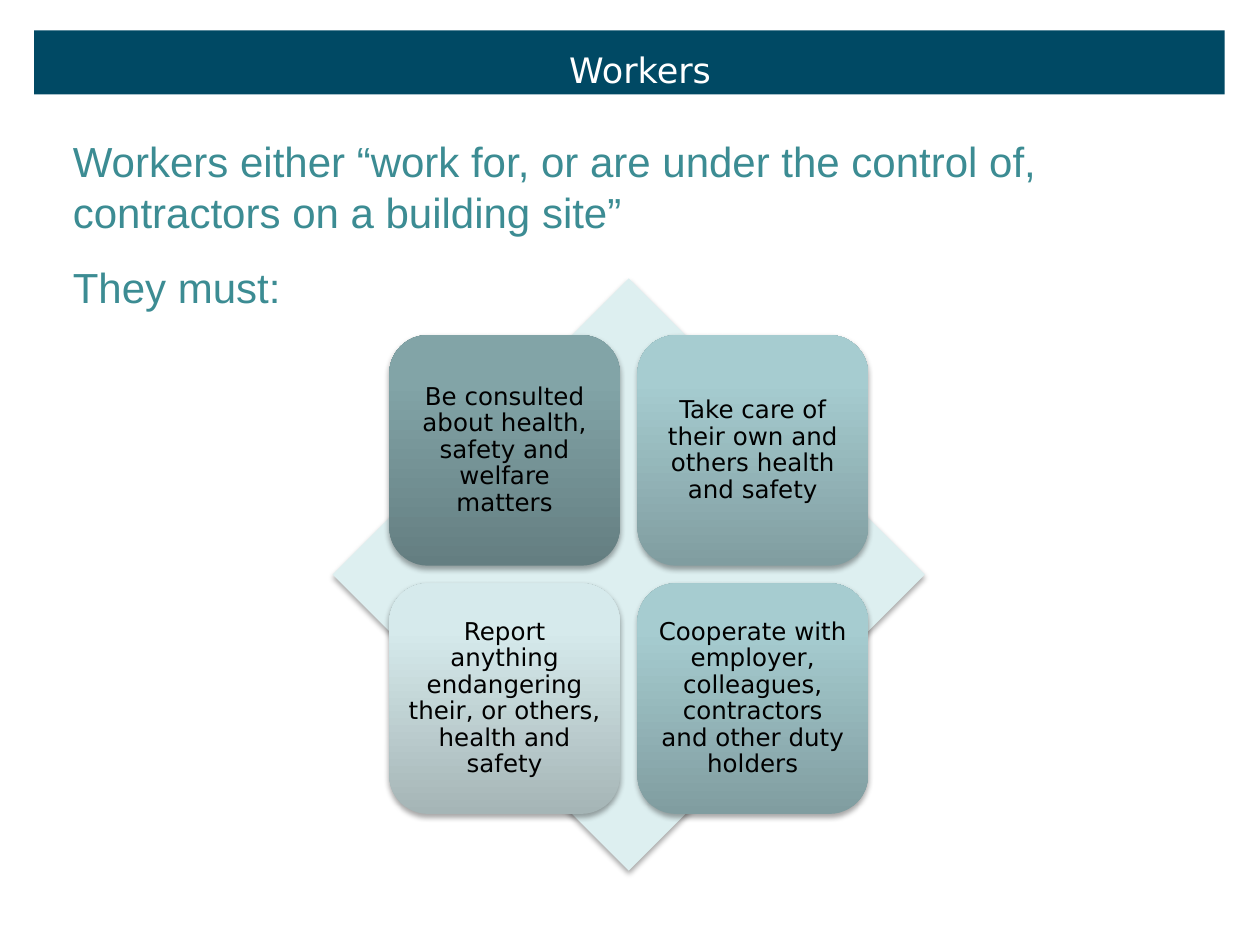
from copy import deepcopy

from lxml.etree import SubElement
from pptx import Presentation
from pptx.dml.color import RGBColor
from pptx.enum.shapes import MSO_SHAPE
from pptx.enum.text import MSO_ANCHOR, MSO_AUTO_SIZE, PP_ALIGN
from pptx.oxml.ns import qn
from pptx.util import Inches, Pt

COLORS = {
    "banner": "004964",
    "white": "FFFFFF",
    "black": "000000",
    "body": "3C8C93",
    "diamond": "DDEFF0",
}
# Stops run from the bottom edge of a card to its top edge.
GRADIENT_POSITIONS = (0, 0.8, 1)
GRADIENTS = {
    "dark": ("647E81", "82A4A7", "82A6A9"),
    "medium": ("809DA0", "A6CCD0", "A6CED2"),
    "light": ("A5B5B6", "D6EAEC", "D6ECEE"),
}
DUTIES = [
    ("Be consulted about health, safety and welfare matters", "dark"),
    ("Take care of their own and others health and safety", "medium"),
    ("Report anything endangering their, or others, health and safety", "light"),
    ("Cooperate with employer, colleagues, contractors and other duty holders", "medium"),
]


def rgb(name):
    return RGBColor.from_string(COLORS[name])


def write_text(shape, text, size, color, font="Arial", align=PP_ALIGN.LEFT,
               anchor=MSO_ANCHOR.TOP, wrap=True, grow=False, inset=None,
               line_spacing=None, space_after=None):
    frame = shape.text_frame
    frame.word_wrap = wrap
    frame.auto_size = MSO_AUTO_SIZE.SHAPE_TO_FIT_TEXT if grow else MSO_AUTO_SIZE.NONE
    frame.vertical_anchor = anchor
    if inset is not None:
        frame.margin_left = frame.margin_right = Inches(inset)
        frame.margin_top = frame.margin_bottom = Inches(inset)
    paragraph = frame.paragraphs[0]
    paragraph.alignment = align
    paragraph.line_spacing = line_spacing
    paragraph.space_after = space_after
    run = paragraph.add_run()
    run.text = text
    run.font.size = Pt(size)
    run.font.name = font
    run.font.color.rgb = rgb(color)


def add_text(slide, box, text, **text_format):
    text_box = slide.shapes.add_textbox(*map(Inches, box))
    write_text(text_box, text, **text_format)


def add_plain_shape(slide, kind, box):
    """Add a preset shape with no outline and no shadow."""
    shape = slide.shapes.add_shape(kind, *map(Inches, box))
    shape.line.fill.background()
    shape.shadow.inherit = False
    return shape


def fill_solid(shape, color):
    shape.fill.solid()
    shape.fill.fore_color.rgb = rgb(color)


def fill_gradient(shape, colors):
    shape.fill.gradient()
    shape.fill.gradient_angle = 90
    stop_list = shape.element.spPr.find(qn("a:gradFill")).find(qn("a:gsLst"))
    stop_list.append(deepcopy(stop_list[-1]))
    for stop, position, color in zip(shape.fill.gradient_stops, GRADIENT_POSITIONS, colors):
        stop.position = position
        stop.color.rgb = RGBColor.from_string(color)


def add_soft_shadow(shape):
    effects = shape.element.spPr.find(qn("a:effectLst"))
    shadow = SubElement(effects, qn("a:outerShdw"), blurRad=str(Pt(3.1)),
                        dist=str(Pt(1.8)), dir="5400000", rotWithShape="0")
    color = SubElement(shadow, qn("a:srgbClr"), val=COLORS["black"])
    SubElement(color, qn("a:alpha"), val="35000")


def add_title_banner(slide, box):
    left, top, width, height = box
    banner = add_plain_shape(slide, MSO_SHAPE.RECTANGLE, box)
    fill_solid(banner, "banner")
    add_text(slide, (left + 0.4, top - 0.09, width - 0.63, height + 0.1), "Workers",
             size=20, color="white", font="DejaVu Sans", align=PP_ALIGN.CENTER,
             anchor=MSO_ANCHOR.BOTTOM, grow=True, line_spacing=0.75)


def add_introduction(slide, box):
    left, top, width, height = box
    add_text(slide, (left, top, width, 0.91),
             "Workers either “work for, or are under the control of, "
             "contractors on a building site”",
             size=24, color="body", grow=True)
    add_text(slide, (left, top + height - 0.51, 1.87, 0.51), "They must:",
             size=24, color="body", wrap=False, grow=True)


def add_duty_matrix(slide, box):
    """Draw a diamond with a two-by-two grid of cards centred on it."""
    left, top, width, height = box
    card, gap = 1.83, 0.14
    margin = (width - 2 * card - gap) / 2
    diamond = add_plain_shape(slide, MSO_SHAPE.DIAMOND, box)
    fill_solid(diamond, "diamond")
    add_soft_shadow(diamond)
    for index, (text, tone) in enumerate(DUTIES):
        row, column = divmod(index, 2)
        shape = add_plain_shape(slide, MSO_SHAPE.ROUNDED_RECTANGLE, (
            left + margin + column * (card + gap),
            top + margin + row * (card + gap), card, card))
        fill_gradient(shape, GRADIENTS[tone])
        add_soft_shadow(shape)
        write_text(shape, text, size=14, color="black", font="DejaVu Sans",
                   align=PP_ALIGN.CENTER, anchor=MSO_ANCHOR.MIDDLE, inset=0.06,
                   line_spacing=0.9, space_after=Pt(5))


def main():
    presentation = Presentation()
    presentation.slide_width = Inches(10)
    presentation.slide_height = Inches(7.5)
    slide = presentation.slides.add_slide(presentation.slide_layouts[6])
    add_title_banner(slide, (0.27, 0.24, 9.45, 0.51))
    add_duty_matrix(slide, (2.64, 2.21, 4.7, 4.7))
    add_introduction(slide, (0.48, 1.03, 9.01, 1.51))
    presentation.save("out.pptx")


if __name__ == "__main__":
    main()
